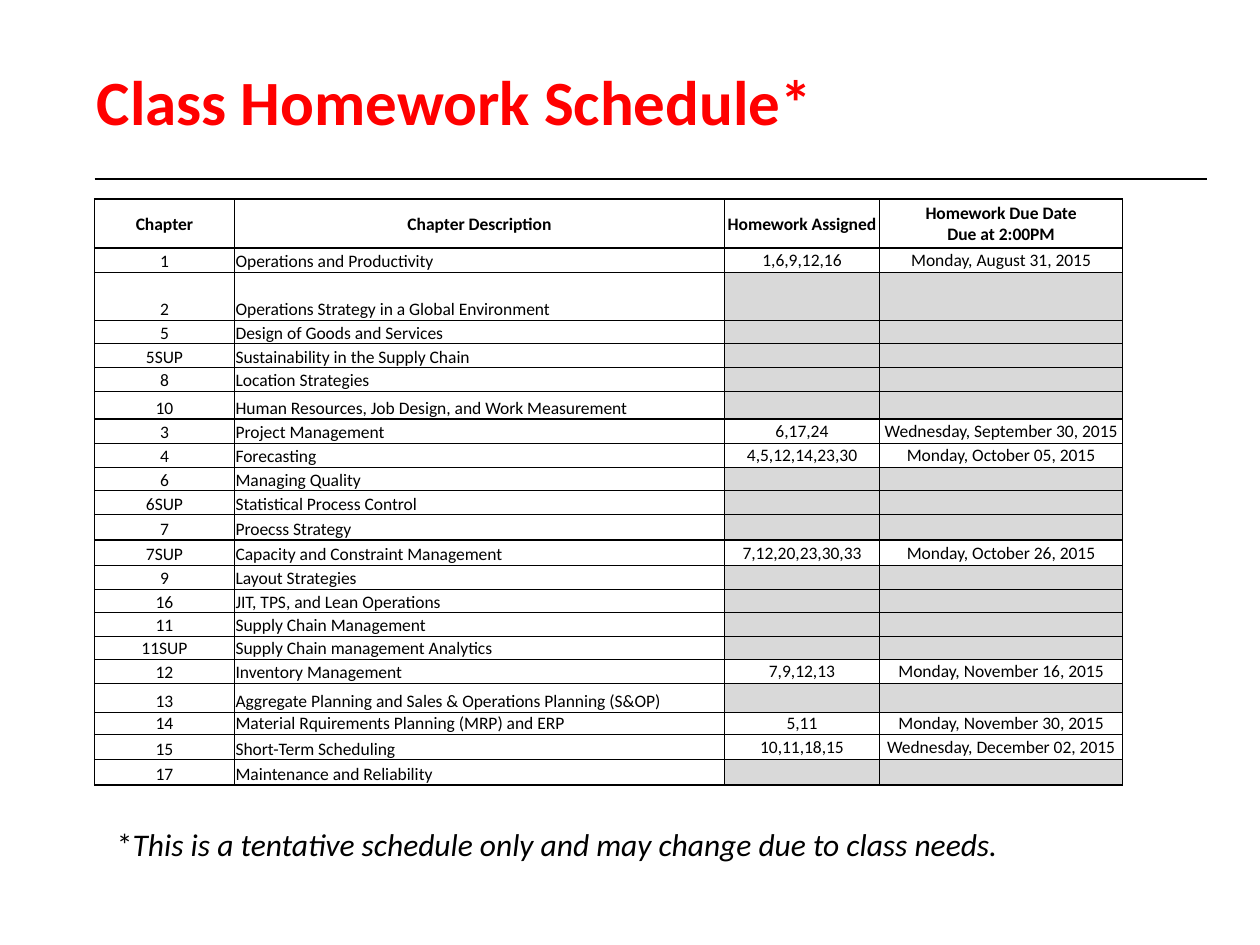
from lxml.etree import SubElement
from pptx import Presentation
from pptx.dml.color import RGBColor
from pptx.enum.shapes import MSO_CONNECTOR
from pptx.enum.text import MSO_ANCHOR as ANCHOR, PP_ALIGN as ALIGN
from pptx.oxml.ns import qn
from pptx.util import Inches, Pt

WIDTH, HEIGHT = Inches(10), Inches(7.5)
FONT = "Calibri"
BLACK, RED, GREY = "000000", "FF0000", "D9D9D9"
THIN, THICK = 0.5, 1
CELL_SIZE = 10
COLUMN_SHARES = [11.1, 38.9, 12.3, 19.3]
ROW_SHARE = 2.53
SPECIAL_ROW_SHARES = {0: 5.2, 2: 5.07, 6: 2.93, 11: 2.67, 12: 2.67, 16: 2.4,
                      18: 3.07, 19: 2.27, 20: 2.67, 21: 2.67}
GROUP_ENDS = {0, 6, 11, 16, 21}
SCHEDULE = [
    ("Chapter", "Chapter Description", "Homework Assigned", "Homework Due Date\vDue at 2:00PM"),
    ("1", "Operations and Productivity", "1,6,9,12,16", "Monday, August 31, 2015"),
    ("2", "Operations Strategy in a Global Environment", "", ""),
    ("5", "Design of Goods and Services", "", ""),
    ("5SUP", "Sustainability in the Supply Chain", "", ""),
    ("8", "Location Strategies", "", ""),
    ("10", "Human Resources, Job Design, and Work Measurement", "", ""),
    ("3", "Project Management", "6,17,24", "Wednesday, September 30, 2015"),
    ("4", "Forecasting", "4,5,12,14,23,30", "Monday, October 05, 2015"),
    ("6", "Managing Quality", "", ""),
    ("6SUP", "Statistical Process Control", "", ""),
    ("7", "Proecss Strategy", "", ""),
    ("7SUP", "Capacity and Constraint Management", "7,12,20,23,30,33", "Monday, October 26, 2015"),
    ("9", "Layout Strategies", "", ""),
    ("16", "JIT, TPS, and Lean Operations", "", ""),
    ("11", "Supply Chain Management", "", ""),
    ("11SUP", "Supply Chain management Analytics", "", ""),
    ("12", "Inventory Management", "7,9,12,13", "Monday, November 16, 2015"),
    ("13", "Aggregate Planning and Sales & Operations Planning (S&OP)", "", ""),
    ("14", "Material Rquirements Planning (MRP) and ERP", "5,11", "Monday, November 30, 2015"),
    ("15", "Short-Term Scheduling", "10,11,18,15", "Wednesday, December 02, 2015"),
    ("17", "Maintenance and Reliability", "", ""),
]


def across(percent):
    """Return a share of the slide's width."""
    return round(WIDTH * percent / 100)


def down(percent):
    """Return a share of the slide's height."""
    return round(HEIGHT * percent / 100)


def color(hex_string):
    """Turn a hex string into a colour."""
    return RGBColor.from_string(hex_string)


def format_run(run, size, hex_string=BLACK, bold=False, italic=False):
    """Set the look of one run."""
    font = run.font
    font.name, font.size = FONT, Pt(size)
    font.bold, font.italic = bold, italic
    font.color.rgb = color(hex_string)


def add_text(slide, left, top, width, height, anchor=ANCHOR.TOP):
    """Add a wrapping text box and return its first paragraph."""
    shape = slide.shapes.add_textbox(across(left), down(top), across(width), down(height))
    shape.text_frame.word_wrap = True
    shape.text_frame.vertical_anchor = anchor
    return shape.text_frame.paragraphs[0]


def add_title(slide):
    """Add the red slide title."""
    paragraph = add_text(slide, 6.7, 6.27, 85, 8.93, ANCHOR.BOTTOM)
    paragraph.text = "Class Homework Schedule*"
    paragraph.line_spacing = 0.8
    format_run(paragraph.runs[0], 36, RED, bold=True)


def add_rule(slide):
    """Add the line under the title."""
    line = slide.shapes.add_connector(
        MSO_CONNECTOR.STRAIGHT, across(7.5), down(18.93), across(95.8), down(18.93))
    line.line.color.rgb = color(BLACK)
    line.line.width = Pt(0.75)
    SubElement(line._element.spPr, qn("a:effectLst"))


def add_border(cell, side, width):
    """Draw one black edge of a cell."""
    edge = SubElement(cell._tc.get_or_add_tcPr(), qn(f"a:ln{side}"), w=str(Pt(width)))
    fill = SubElement(edge, qn("a:solidFill"))
    SubElement(fill, qn("a:srgbClr"), val=BLACK)


def fill_cell(cell, text, row, column):
    """Write and style one schedule cell; an empty one turns grey."""
    cell.margin_left = cell.margin_right = cell.margin_top = Inches(0.01)
    cell.margin_bottom = 0
    is_centred = row == 0 or column > 1
    cell.vertical_anchor = ANCHOR.MIDDLE if is_centred else ANCHOR.BOTTOM
    cell.text_frame.text = text
    paragraph = cell.text_frame.paragraphs[0]
    paragraph.alignment = ALIGN.LEFT if column == 1 and row else ALIGN.CENTER
    for run in paragraph.runs:
        format_run(run, CELL_SIZE, bold=row == 0)
    size = str(CELL_SIZE * 100)
    for line_break in paragraph._p.findall(qn("a:br")):
        SubElement(line_break, qn("a:rPr"), sz=size)
    SubElement(paragraph._p, qn("a:endParaRPr"), sz=size)
    add_border(cell, "L", THICK if column == 0 else THIN)
    add_border(cell, "R", THIN)
    add_border(cell, "T", THICK if row == 0 or row - 1 in GROUP_ENDS else THIN)
    add_border(cell, "B", THICK if row in GROUP_ENDS else THIN)
    if text:
        cell.fill.background()
    else:
        cell.fill.solid()
        cell.fill.fore_color.rgb = color(GREY)


def add_schedule(slide):
    """Add the homework table."""
    row_shares = [SPECIAL_ROW_SHARES.get(row, ROW_SHARE) for row in range(len(SCHEDULE))]
    table = slide.shapes.add_table(
        len(SCHEDULE), len(COLUMN_SHARES), across(7.5), down(21.07),
        across(sum(COLUMN_SHARES)), down(sum(row_shares))).table
    table.first_row = table.horz_banding = False
    for column, share in zip(table.columns, COLUMN_SHARES):
        column.width = across(share)
    for row, share in zip(table.rows, row_shares):
        row.height = down(share)
    for row, texts in enumerate(SCHEDULE):
        for column, text in enumerate(texts):
            fill_cell(table.cell(row, column), text, row, column)


def add_footnote(slide):
    """Add the note with its upright asterisk."""
    paragraph = add_text(slide, 8.3, 86.67, 75.8, 5.6)
    note = "This is a tentative schedule only and may change due to class needs."
    for text, italic in (("*", False), (note, True)):
        run = paragraph.add_run()
        run.text = text
        format_run(run, 18, italic=italic)


def main():
    """Build and save the slide."""
    presentation = Presentation()
    presentation.slide_width, presentation.slide_height = WIDTH, HEIGHT
    slide = presentation.slides.add_slide(presentation.slide_layouts[6])
    add_rule(slide)
    add_title(slide)
    add_schedule(slide)
    add_footnote(slide)
    presentation.save("out.pptx")


if __name__ == "__main__":
    main()
